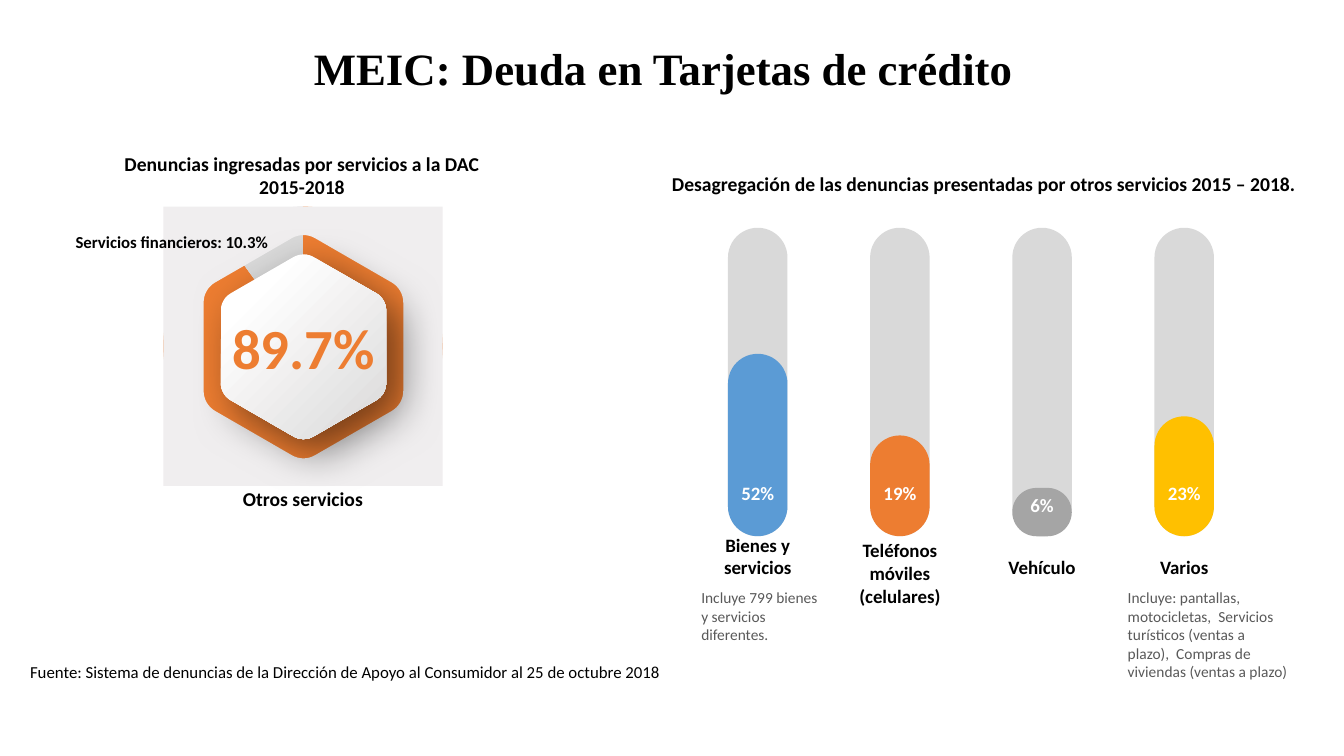
from math import cos, pi, sin

from lxml import etree
from pptx import Presentation
from pptx.chart.data import CategoryChartData
from pptx.dml.color import RGBColor
from pptx.enum.chart import XL_CHART_TYPE
from pptx.enum.shapes import MSO_SHAPE
from pptx.enum.text import MSO_ANCHOR, MSO_AUTO_SIZE, PP_ALIGN
from pptx.oxml import parse_xml
from pptx.oxml.ns import nsdecls, qn
from pptx.util import Inches, Pt

BLACK = RGBColor(0x00, 0x00, 0x00)
WHITE = RGBColor(0xFF, 0xFF, 0xFF)
ORANGE = RGBColor(0xED, 0x7D, 0x31)
BLUE = RGBColor(0x5B, 0x9B, 0xD5)
GRAY = RGBColor(0xA5, 0xA5, 0xA5)
YELLOW = RGBColor(0xFF, 0xC0, 0x00)
TRACK = RGBColor(0xD9, 0xD9, 0xD9)
FRAME = RGBColor(0xF0, 0xEE, 0xEF)
HEXAGON_SHADE = RGBColor(0xDA, 0xD9, 0xD9)
NOTE = RGBColor(0x59, 0x59, 0x59)

DIAL_LEFT, DIAL_TOP, DIAL_SIDE = 1.62, 2.05, 2.77
DIAL_CENTER = (3.01, 3.44)

BAR_LEFT, BAR_PITCH, BAR_WIDTH = 7.22, 1.41, 0.59
BAR_TOP, BAR_HEIGHT = 2.26, 3.06
CAPTION_WIDTH = 1.12
CAPTION_BOTTOM = 5.79

# percentage, colour, filled height, top of the percentage,
# caption, caption height, caption bottom
BARS = [
    ("52%", BLUE, 1.81, 4.73, "Bienes y servicios", 0.56, CAPTION_BOTTOM),
    ("19%", ORANGE, 1, 4.73, "Teléfonos móviles (celulares)", 0.78, 6.07),
    ("6%", GRAY, 0.48, 4.85, "Vehículo", 0.33, CAPTION_BOTTOM),
    ("23%", YELLOW, 1.19, 4.73, "Varios", 0.33, CAPTION_BOTTOM),
]
# bar index, width, height, text
NOTES = [
    (0, 1.22, 0.66, "Incluye 799 bienes y servicios diferentes."),
    (3, 1.59, 1.03, "Incluye: pantallas, motocicletas,  Servicios turísticos "
                    "(ventas a plazo),  Compras de viviendas (ventas a plazo)"),
]


def rounded_hexagon(apothem, radius, steps=8):
    """Return the outline points of a pointy-top hexagon with round corners."""
    center_x, center_y = DIAL_CENTER
    reach = (apothem - radius) / cos(pi / 6)
    points = []
    for corner in range(6):
        middle = -pi / 2 + corner * pi / 3
        for step in range(steps + 1):
            angle = middle - pi / 6 + step * pi / 3 / steps
            points.append((center_x + reach * cos(middle) + radius * cos(angle),
                           center_y + reach * sin(middle) + radius * sin(angle)))
    return points


class SlideBuilder:
    font = "Calibri"

    def __init__(self, slide):
        self.slide = slide

    def format_text(self, frame, text, size, color, bold, align, anchor, font=None):
        frame.vertical_anchor = anchor
        paragraph = frame.paragraphs[0]
        paragraph.alignment = align
        run = paragraph.add_run()
        run.text = text
        run.font.name = font or self.font
        run.font.size = Pt(size)
        run.font.bold = bold
        run.font.color.rgb = color

    def text(self, left, top, width, height, text, size, color=BLACK, bold=True,
             align=PP_ALIGN.CENTER, anchor=MSO_ANCHOR.TOP, side=0, edge=0.05,
             wrap=True, font=None):
        box = self.slide.shapes.add_textbox(
            Inches(left), Inches(top), Inches(width), Inches(height))
        frame = box.text_frame
        frame.word_wrap = wrap
        frame.auto_size = MSO_AUTO_SIZE.SHAPE_TO_FIT_TEXT
        frame.margin_left = frame.margin_right = Inches(side)
        frame.margin_top = frame.margin_bottom = Inches(edge)
        self.format_text(frame, text, size, color, bold, align, anchor, font)

    def pill(self, left, top, height, color):
        shape = self.slide.shapes.add_shape(
            MSO_SHAPE.ROUNDED_RECTANGLE, Inches(left), Inches(top),
            Inches(BAR_WIDTH), Inches(height))
        shape.adjustments[0] = 0.5
        shape.shadow.inherit = False
        shape.fill.solid()
        shape.fill.fore_color.rgb = color
        shape.line.fill.background()

    def outline(self, contours):
        contours = [[(Inches(x), Inches(y)) for x, y in contour] for contour in contours]
        builder = self.slide.shapes.build_freeform(*contours[0][0])
        for index, contour in enumerate(contours):
            if index:
                builder.move_to(*contour[0])
            builder.add_line_segments(contour[1:], close=True)
        shape = builder.convert_to_shape()
        shape.shadow.inherit = False
        shape.line.fill.background()
        return shape

    def pie(self, values, colors):
        data = CategoryChartData()
        data.categories = ["1", "2"]
        data.add_series("Series 1", values)
        chart = self.slide.shapes.add_chart(
            XL_CHART_TYPE.PIE, Inches(DIAL_LEFT), Inches(DIAL_TOP),
            Inches(DIAL_SIDE), Inches(DIAL_SIDE), data).chart
        chart.has_legend = False
        chart.has_title = False
        chart.font.name = self.font
        chart.font.size = Pt(10)
        chart.font.color.rgb = BLACK
        plot = chart.plots[0]
        plot.vary_by_categories = True
        for index, color in enumerate(colors):
            point = plot.series[0].points[index].format
            point.fill.solid()
            point.fill.fore_color.rgb = color
            point.line.fill.background()
        plot_area = chart.element.find(".//" + qn("c:plotArea"))
        for layout in plot_area.findall(qn("c:layout")):
            plot_area.remove(layout)
        plot_area.insert(0, parse_xml(
            f'<c:layout {nsdecls("c")}><c:manualLayout><c:layoutTarget val="inner"/>'
            '<c:xMode val="edge"/><c:yMode val="edge"/><c:x val="0"/><c:y val="0"/>'
            '<c:w val="1"/><c:h val="1"/></c:manualLayout></c:layout>'))

    def dial_frame(self):
        right, bottom = DIAL_LEFT + DIAL_SIDE, DIAL_TOP + DIAL_SIDE
        square = [(DIAL_LEFT, DIAL_TOP), (right, DIAL_TOP),
                  (right, bottom), (DIAL_LEFT, bottom)]
        shape = self.outline([square, rounded_hexagon(0.99, 0.23)[::-1]])
        shape.fill.solid()
        shape.fill.fore_color.rgb = FRAME

    def dial_face(self, text):
        shape = self.outline([rounded_hexagon(0.82, 0.2)])
        shape.fill.gradient()
        shape.fill.gradient_angle = 315
        stops = zip(shape.fill.gradient_stops, (0.2, 1), (WHITE, HEXAGON_SHADE))
        for stop, position, color in stops:
            stop.position = position
            stop.color.rgb = color
        effects = shape.element.spPr.find(qn("a:effectLst"))
        shadow = etree.SubElement(
            effects, qn("a:outerShdw"), blurRad=str(Pt(30)), dist=str(Pt(14)),
            dir="2700000", algn="tl", rotWithShape="0")
        shade = etree.SubElement(shadow, qn("a:srgbClr"), val=str(BLACK))
        etree.SubElement(shade, qn("a:alpha"), val="50000")
        frame = shape.text_frame
        frame.word_wrap = False
        frame.margin_left = frame.margin_right = Inches(0.06)
        frame.margin_top = frame.margin_bottom = Inches(0.03)
        self.format_text(frame, text, 40.5, ORANGE, True,
                         PP_ALIGN.CENTER, MSO_ANCHOR.MIDDLE)


def main():
    presentation = Presentation()
    presentation.slide_width = Inches(13.33)
    presentation.slide_height = Inches(7.5)
    builder = SlideBuilder(presentation.slides.add_slide(presentation.slide_layouts[6]))

    builder.text(3.08, 0.4, 7, 0.54, "MEIC: Deuda en Tarjetas de crédito", 32,
                 edge=0, wrap=False, font="Times New Roman")

    builder.pie((90, 10), (ORANGE, TRACK))
    builder.dial_frame()
    builder.dial_face("89.7%")
    bottom = MSO_ANCHOR.BOTTOM
    builder.text(1.17, 1.45, 3.65, 0.57,
                 "Denuncias ingresadas por servicios a la DAC 2015-2018", 14, anchor=bottom)
    builder.text(1.8, 4.77, 2.41, 0.34, "Otros servicios", 14, anchor=bottom)
    builder.text(0.5, 2.25, 2.41, 0.3, "Servicios financieros: 10.3%", 12, anchor=bottom)

    builder.text(6.54, 1.66, 6.44, 0.34,
                 "Desagregación de las denuncias presentadas por otros servicios 2015 – 2018.",
                 14, side=0.1, wrap=False)
    caption_shift = (BAR_WIDTH - CAPTION_WIDTH) / 2
    for index, bar in enumerate(BARS):
        percentage, color, filled, label_top, caption, caption_height, caption_bottom = bar
        left = BAR_LEFT + index * BAR_PITCH
        builder.pill(left, BAR_TOP, BAR_HEIGHT, TRACK)
        builder.pill(left, BAR_TOP + BAR_HEIGHT - filled, filled, color)
        builder.text(left, label_top, BAR_WIDTH, 0.33, percentage, 13.5, WHITE, wrap=False)
        builder.text(left + caption_shift, caption_bottom - caption_height, CAPTION_WIDTH,
                     caption_height, caption, 13.5, anchor=bottom)
    for index, width, height, note in NOTES:
        builder.text(BAR_LEFT + index * BAR_PITCH + caption_shift, CAPTION_BOTTOM,
                     width, height, note, 11, NOTE, bold=False, align=PP_ALIGN.LEFT)

    builder.text(0.2, 6.52, 9.9, 0.3,
                 "Fuente: Sistema de denuncias de la Dirección de Apoyo al Consumidor "
                 "al 25 de octubre 2018", 12, bold=False, align=PP_ALIGN.LEFT, side=0.1)
    presentation.save("out.pptx")


if __name__ == "__main__":
    main()
